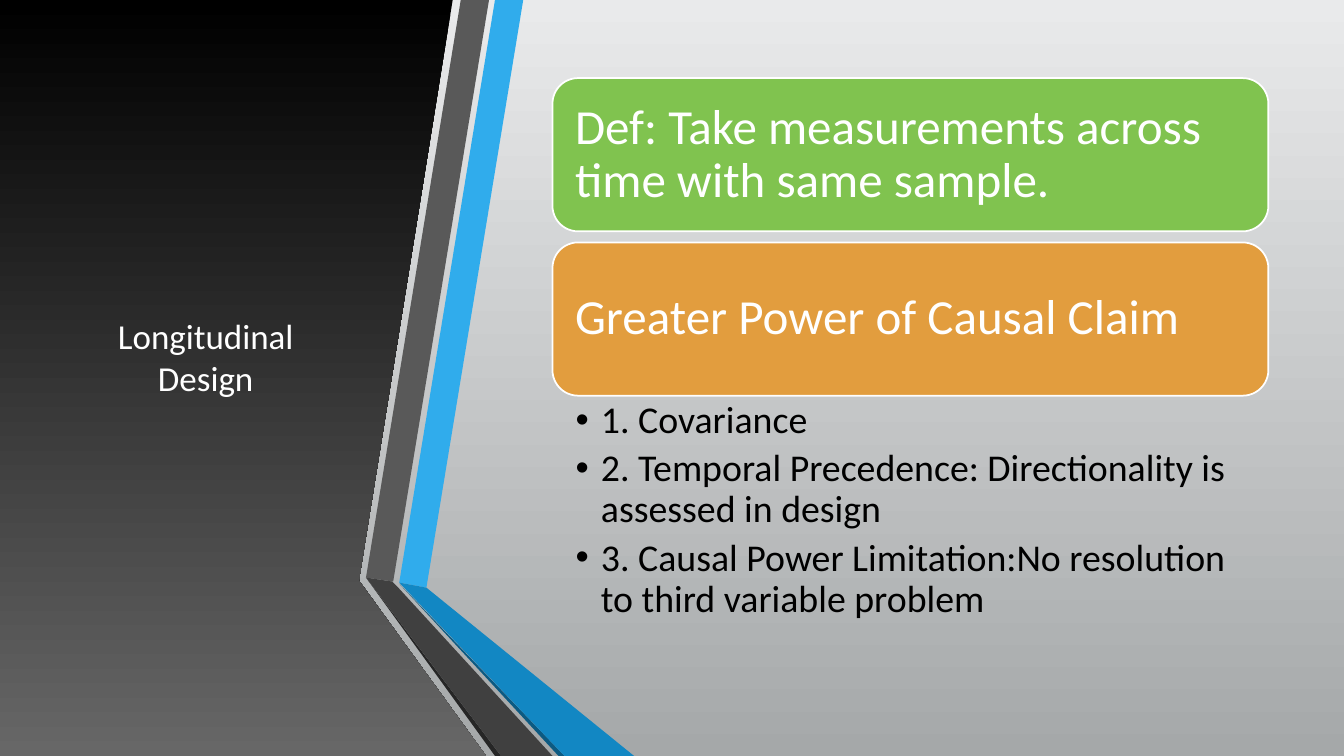
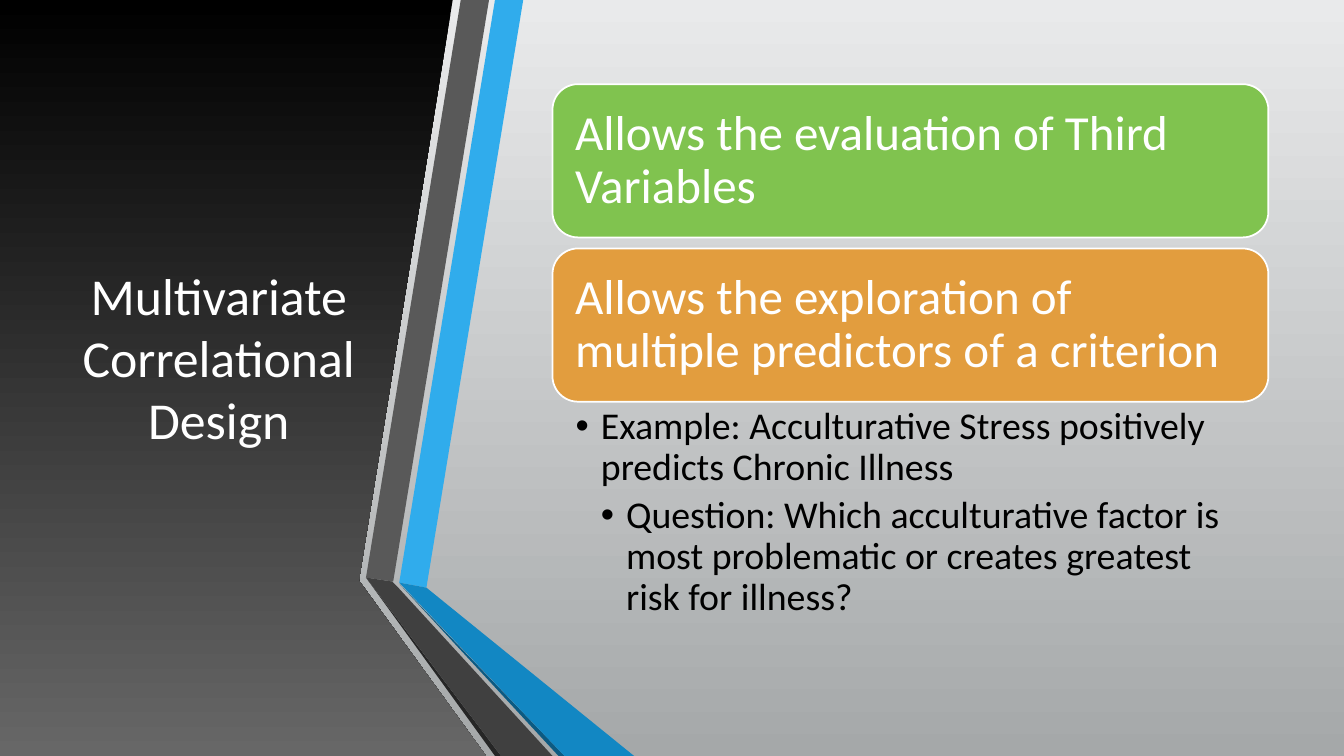
from lxml import etree
from pptx import Presentation
from pptx.dml.color import RGBColor
from pptx.enum.shapes import MSO_SHAPE
from pptx.enum.text import MSO_ANCHOR, MSO_AUTO_SIZE, PP_ALIGN
from pptx.oxml.ns import qn
from pptx.util import Inches, Pt

ROUNDED = MSO_SHAPE.ROUNDED_RECTANGLE
TOP, MIDDLE = MSO_ANCHOR.TOP, MSO_ANCHOR.MIDDLE
LEFT, CENTER = PP_ALIGN.LEFT, PP_ALIGN.CENTER
NO_AUTOFIT = MSO_AUTO_SIZE.NONE

FONT = "Calibri"
WHITE, BLACK = "FFFFFF", "000000"
BACKDROP = ("E9EAEB", "A5A8A9")
PANEL_SHADES = (BLACK, "676767")
CARD_COLORS = ("80C34F", "E29D3E")

WIDTH, HEIGHT = 13.33, 7.5
CONTENT_TOP, CONTENT_HEIGHT = 0.75, 5.58
CARD_LEFT, CARD_WIDTH, CARD_HEIGHT, CARD_GAP = 5.48, 7.1, 1.52, 0.11
BULLET_STEP = 0.25

PANEL = [(0, 0), (4.49, 0), (3.56, 5.76), (4.82, HEIGHT), (0, HEIGHT)]
RIBBONS = [
    ("30ACEC", [(3.96, 5.78), (4.23, 5.83), (5.19, 0), (4.91, 0)]),
    ("595959", [(4.85, 0), (4.57, 0), (3.63, 5.73), (3.9, 5.77)]),
    ("262626", [(3.63, 5.73), (4.91, HEIGHT), (4.97, HEIGHT)]),
    ("0C5A82", [(3.96, 5.79), (5.54, HEIGHT), (5.6, HEIGHT)]),
    ("1287C3", [(3.96, 5.78), (5.6, HEIGHT), (6.29, HEIGHT), (4.23, 5.83)]),
    ("404040", [(5.48, HEIGHT), (3.95, 5.83), (3.89, 5.77), (3.63, 5.73),
                (4.97, HEIGHT)]),
]

SLIDES = [
    {
        "title": "Longitudinal Design",
        "title_box": (0.84, 2.4),
        "title_size": 25,
        "cards": ["Def: Take measurements across time with same sample.",
                  "Greater Power of Causal Claim"],
        "bullets": [
            (1, "1. Covariance"),
            (1, "2. Temporal Precedence: Directionality is assessed in design"),
            (1, "3. Causal Power Limitation:No resolution to third variable problem"),
        ],
        "list_height": 2.38,
    },
    {
        "title": "Multivariate Correlational Design",
        "title_box": (0.59, 3.16),
        "title_size": 37,
        "cards": ["Allows the evaluation of Third Variables",
                  "Allows the exploration of multiple predictors of a criterion"],
        "bullets": [
            (1, "Example: Acculturative Stress positively predicts Chronic Illness"),
            (2, "Question: Which acculturative factor is most problematic "
                "or creates greatest risk for illness?"),
        ],
        "list_height": 2.26,
    },
]


def color(value):
    """Turn a hex string into a colour."""
    return RGBColor.from_string(value)


def fill_solid(shape, value):
    """Fill a shape with one colour."""
    shape.fill.solid()
    shape.fill.fore_color.rgb = color(value)


def fill_gradient(fill, shades):
    """Fill from the first shade at the top to the second at the bottom."""
    fill.gradient()
    fill.gradient_angle = 270
    for stop, shade in zip(fill.gradient_stops, shades):
        stop.color.rgb = color(shade)


def place(shape, left, top, width, height):
    """Move and size a placeholder."""
    shape.left, shape.top = Inches(left), Inches(top)
    shape.width, shape.height = Inches(width), Inches(height)


def format_frame(frame, anchor, margins):
    """Set wrapping, anchor and the left, top, right and bottom margins."""
    frame.word_wrap = True
    frame.auto_size = NO_AUTOFIT
    frame.vertical_anchor = anchor
    (frame.margin_left, frame.margin_top,
     frame.margin_right, frame.margin_bottom) = map(Inches, margins)


def write(paragraph, text, size, ink, align=LEFT, spacing=0.9):
    """Add one formatted run to a paragraph."""
    paragraph.alignment = align
    paragraph.line_spacing = spacing
    paragraph.space_before = Pt(0)
    run = paragraph.add_run()
    run.text = text
    run.font.name = FONT
    run.font.size = Pt(size)
    run.font.color.rgb = color(ink)


def set_bullet(paragraph, level):
    """Give a paragraph a round bullet with a hanging indent."""
    paragraph.level = level
    properties = paragraph._p.get_or_add_pPr()
    properties.set("marL", str(Inches(BULLET_STEP * level)))
    properties.set("indent", str(-Inches(BULLET_STEP)))
    etree.SubElement(properties, qn("a:buChar")).set("char", "•")


def add_outline(slide, points):
    """Draw a closed outline without line or shadow."""
    corners = [(Inches(x), Inches(y)) for x, y in points]
    builder = slide.shapes.build_freeform(*corners[0])
    builder.add_line_segments(corners[1:], close=True)
    shape = builder.convert_to_shape()
    shape.shadow.inherit = False
    shape.line.fill.background()
    return shape


def add_side_panel(slide):
    """Draw the dark panel and the folded ribbons beside it."""
    fill_gradient(add_outline(slide, PANEL).fill, PANEL_SHADES)
    for ribbon_color, points in RIBBONS:
        fill_solid(add_outline(slide, points), ribbon_color)


def add_title(slide, text, box, size):
    """Set the title in front of the side panel."""
    title = slide.shapes.title
    left, width = box
    place(title, left, CONTENT_TOP, width, CONTENT_HEIGHT)
    format_frame(title.text_frame, MIDDLE, (0.1, 0.05, 0.1, 0.05))
    write(title.text_frame.paragraphs[0], text, size, WHITE, CENTER, 1.0)
    title.element.getparent().append(title.element)


def add_card(slide, text, top, card_color):
    """Draw one rounded card with its statement."""
    card = slide.shapes.add_shape(
        ROUNDED, Inches(CARD_LEFT), Inches(top), Inches(CARD_WIDTH), Inches(CARD_HEIGHT))
    card.shadow.inherit = False
    fill_solid(card, card_color)
    card.line.color.rgb = color(WHITE)
    card.line.width = Pt(1.25)
    format_frame(card.text_frame, MIDDLE, (0.15,) * 4)
    write(card.text_frame.paragraphs[0], text, 35, WHITE)


def add_bullets(slide, bullets, top, height):
    """Fill the body placeholder with the bulleted list."""
    body = slide.placeholders[1]
    place(body, CARD_LEFT, top, CARD_WIDTH, height)
    frame = body.text_frame
    format_frame(frame, TOP, (0.23, 0.05, 0.27, 0.05))
    for index, (level, text) in enumerate(bullets):
        paragraph = frame.add_paragraph() if index else frame.paragraphs[0]
        write(paragraph, text, 27, BLACK)
        paragraph.space_after = Pt(5.4)
        set_bullet(paragraph, level)


def add_content(slide, cards, bullets, list_height):
    """Stack cards and list, centred in the content area."""
    pitch = CARD_HEIGHT + CARD_GAP
    stack_height = len(cards) * pitch - CARD_GAP + list_height
    top = CONTENT_TOP + (CONTENT_HEIGHT - stack_height) / 2
    for index, text in enumerate(cards):
        add_card(slide, text, top + index * pitch, CARD_COLORS[index])
    add_bullets(slide, bullets, top + stack_height - list_height, list_height)


def add_design_slide(presentation, content):
    """Build one slide about a research design."""
    slide = presentation.slides.add_slide(presentation.slide_layouts[1])
    add_side_panel(slide)
    add_title(slide, content["title"], content["title_box"], content["title_size"])
    add_content(slide, content["cards"], content["bullets"], content["list_height"])


def main():
    """Build and save the presentation."""
    presentation = Presentation()
    presentation.slide_width = Inches(WIDTH)
    presentation.slide_height = Inches(HEIGHT)
    fill_gradient(presentation.slide_master.background.fill, BACKDROP)
    for content in SLIDES:
        add_design_slide(presentation, content)
    presentation.save("out.pptx")


if __name__ == "__main__":
    main()
